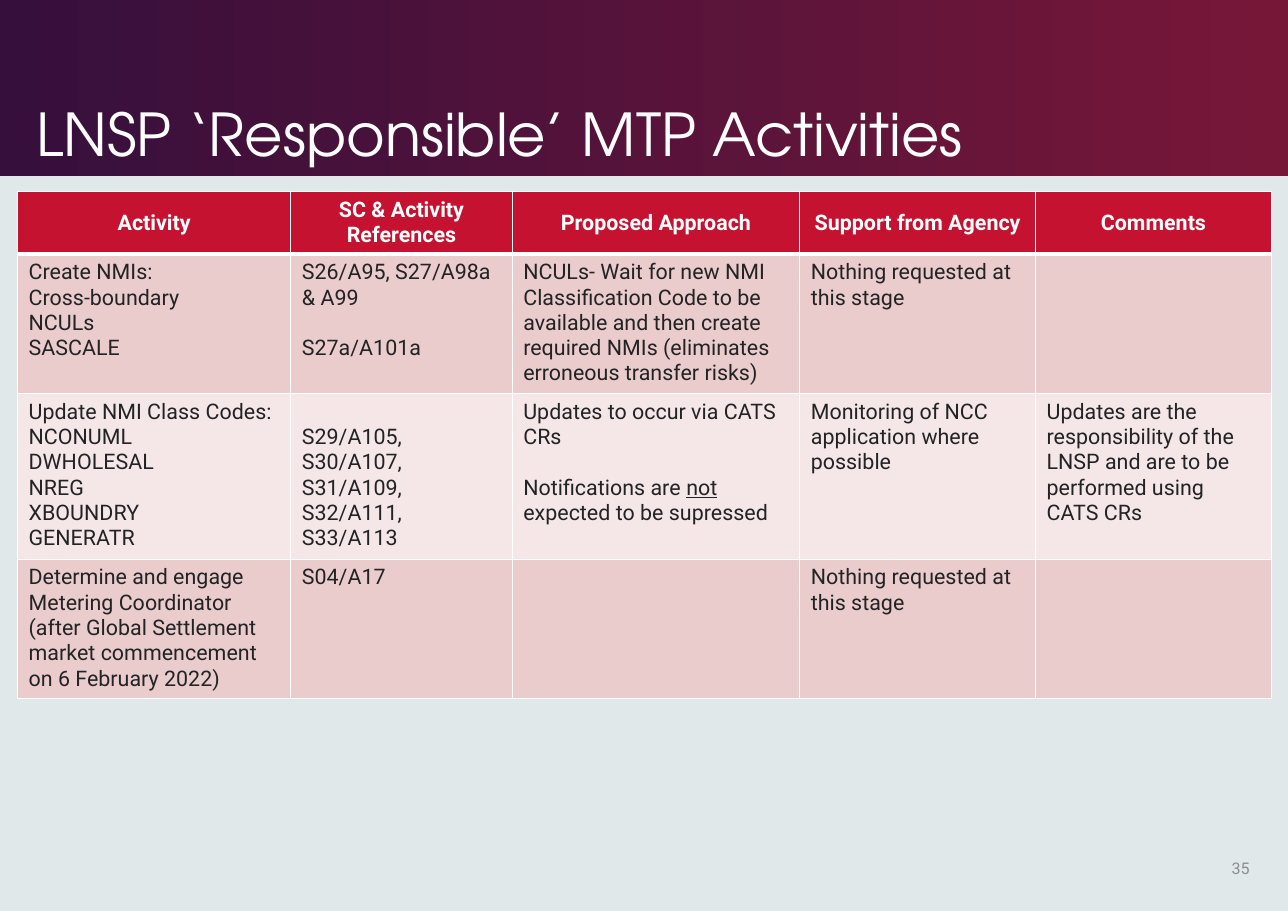
from lxml.etree import SubElement
from pptx import Presentation
from pptx.dml.color import RGBColor
from pptx.enum.shapes import MSO_SHAPE
from pptx.enum.text import MSO_ANCHOR, MSO_AUTO_SIZE, PP_ALIGN
from pptx.oxml.ns import qn
from pptx.util import Inches, Pt

HEADINGS = ["Activity", "SC & Activity References", "Proposed Approach",
            "Support from Agency", "Comments"]
ACTIVITIES = [
    ["Create NMIs:\nCross-boundary\nNCULs\nSASCALE",
     "S26/A95, S27/A98a & A99\n\nS27a/A101a",
     "NCULs- Wait for new NMI Classification Code to be available and then "
     "create required NMIs (eliminates erroneous transfer risks)",
     "Nothing requested at this stage", ""],
    ["Update NMI Class Codes:\nNCONUML\nDWHOLESAL\nNREG\nXBOUNDRY\nGENERATR",
     "\nS29/A105,\nS30/A107,\nS31/A109,\nS32/A111,\nS33/A113",
     "Updates to occur via CATS CRs\n\n"
     "Notifications are _not_ expected to be supressed",
     "Monitoring of NCC application where possible",
     "Updates are the responsibility of the LNSP and are to be performed using CATS CRs"],
    ["Determine and engage Metering Coordinator (after Global Settlement "
     "market commencement on 6 February 2022)",
     "S04/A17", "", "Nothing requested at this stage", ""],
]
COLUMN_WIDTHS = [2.48, 2.01, 2.61, 2.14, 2.14]
ROW_HEIGHTS = [0.55, 1.25, 1.48, 1.25]


def rgb(hex_colour):
    return RGBColor.from_string(hex_colour)


class ActivitySlide:
    body_font = "Roboto"
    title_font = "TeX Gyre Adventor"
    white = "FFFFFF"
    ink = "222324"
    header_red = "C41230"
    bands = ["EACCCD", "F5E7E8"]
    line_height = 0.23

    def __init__(self, deck):
        self.slide = deck.slides.add_slide(deck.slide_layouts[5])
        background = self.slide.background.fill
        background.solid()
        background.fore_color.rgb = rgb("E0E8EA")

    def format(self, paragraph, size, colour, font=body_font, bold=False,
               align=PP_ALIGN.LEFT):
        paragraph.alignment = align
        paragraph.font.name = font
        paragraph.font.size = Pt(size)
        paragraph.font.bold = bold
        paragraph.font.color.rgb = rgb(colour)

    def banner(self, width, height, start, end):
        banner = self.slide.shapes.add_shape(
            MSO_SHAPE.RECTANGLE, 0, 0, Inches(width), Inches(height))
        banner.shadow.inherit = False
        banner.line.fill.background()
        banner.fill.gradient()
        banner.fill.gradient_angle = 0
        for stop, colour in zip(banner.fill.gradient_stops, (start, end)):
            stop.color.rgb = rgb(colour)
        self.slide.shapes.title._element.addprevious(banner._element)

    def title(self, text, left, top, width, height):
        title = self.slide.shapes.title
        title.left, title.top = Inches(left), Inches(top)
        title.width, title.height = Inches(width), Inches(height)
        frame = title.text_frame
        frame.text = text
        frame.auto_size = MSO_AUTO_SIZE.NONE
        frame.vertical_anchor = MSO_ANCHOR.BOTTOM
        frame.paragraphs[0].line_spacing = 0.9
        self.format(frame.paragraphs[0], 38.6, self.white, self.title_font)

    def page_number(self, text, left, top, width, height):
        frame = self.slide.shapes.add_textbox(
            Inches(left), Inches(top), Inches(width), Inches(height)).text_frame
        frame.word_wrap = True
        frame.vertical_anchor = MSO_ANCHOR.MIDDLE
        frame.text = text
        self.format(frame.paragraphs[0], 10.5, "8D8D8E", align=PP_ALIGN.RIGHT)

    def table(self, rows, left, top):
        table = self.slide.shapes.add_table(
            len(rows), len(COLUMN_WIDTHS), Inches(left), Inches(top),
            Inches(sum(COLUMN_WIDTHS)), Inches(sum(ROW_HEIGHTS))).table
        for column, width in zip(table.columns, COLUMN_WIDTHS):
            column.width = Inches(width)
        for row, height in zip(table.rows, ROW_HEIGHTS):
            row.height = Inches(height)
        for r, texts in enumerate(rows):
            for c, text in enumerate(texts):
                self.cell(table.cell(r, c), text, r)

    def cell(self, cell, text, row):
        header = row == 0
        self.borders(cell, top=3 if row == 1 else 1, bottom=3 if header else 1)
        cell.fill.solid()
        cell.fill.fore_color.rgb = rgb(
            self.header_red if header else self.bands[(row - 1) % 2])
        cell.vertical_anchor = MSO_ANCHOR.MIDDLE if header else MSO_ANCHOR.TOP
        lines = text.lstrip("\n")
        cell.margin_top = Inches(0.05 + self.line_height * (len(text) - len(lines)))
        frame = cell.text_frame
        for b, block in enumerate(lines.split("\n\n")):
            for n, line in enumerate(block.split("\n")):
                first = b == n == 0
                paragraph = frame.paragraphs[0] if first else frame.add_paragraph()
                if b and n == 0:
                    paragraph.space_before = Inches(self.line_height)
                self.format(paragraph, 14, self.white if header else self.ink,
                            bold=header,
                            align=PP_ALIGN.CENTER if header else PP_ALIGN.LEFT)
                for part, words in enumerate(line.split("_")):
                    run = paragraph.add_run()
                    run.text = words
                    if part % 2:
                        run.font.underline = True

    def borders(self, cell, top, bottom):
        properties = cell._tc.get_or_add_tcPr()
        for side, points in zip("LRTB", (1, 1, top, bottom)):
            line = SubElement(properties, qn(f"a:ln{side}"), w=str(Pt(points)))
            fill = SubElement(line, qn("a:solidFill"))
            SubElement(fill, qn("a:srgbClr"), val=self.white)


def main():
    deck = Presentation()
    deck.slide_width, deck.slide_height = Inches(11.69), Inches(8.27)
    page = ActivitySlide(deck)
    page.banner(11.69, 1.6, "360F3C", "771738")
    page.title("LNSP ‘Responsible’ MTP Activities", 0.23, 0.16, 10.29, 1.43)
    page.page_number("35", 10.89, 7.66, 0.55, 0.44)
    page.table([HEADINGS] + ACTIVITIES, 0.16, 1.74)
    deck.save("out.pptx")


if __name__ == "__main__":
    main()
